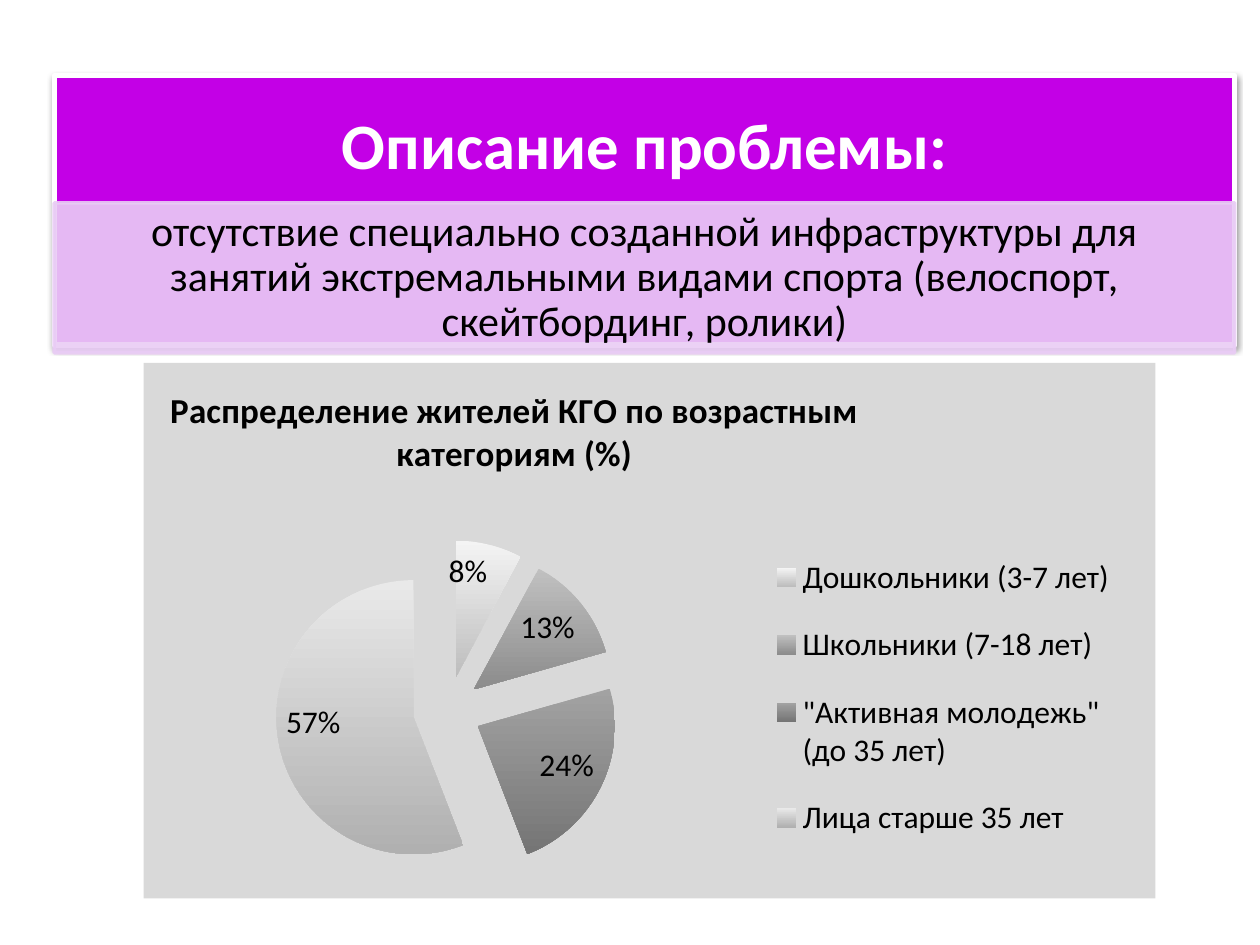
import pptx
import pptx.chart.data
import pptx.dml.color
import pptx.enum.chart
import pptx.enum.shapes
import pptx.enum.text
import pptx.oxml
import pptx.oxml.ns
import pptx.util

Pt = pptx.util.Pt
NS = pptx.oxml.ns.nsdecls("a", "c")
COLORS = {"purple": "C300E6", "lilac": "E9CCF5", "white": "FFFFFF",
          "black": "000000", "panel": "D9D9D9"}


def rgb(name):
    return pptx.dml.color.RGBColor.from_string(COLORS[name])


def write(tf, text, size, color, bold, inset_x, inset_y):
    """Fill a frame with one centred paragraph."""
    tf.word_wrap = True
    tf.vertical_anchor = pptx.enum.text.MSO_ANCHOR.MIDDLE
    tf.margin_left = tf.margin_right = Pt(inset_x)
    tf.margin_top = tf.margin_bottom = Pt(inset_y)
    p = tf.paragraphs[0]
    p.alignment = pptx.enum.text.PP_ALIGN.CENTER
    p.line_spacing = 0.9
    r = p.add_run()
    r.text = text
    r.font.name = "Calibri"
    r.font.size = Pt(size)
    r.font.bold = bold
    r.font.color.rgb = rgb(color)


prs = pptx.Presentation()
prs.slide_width, prs.slide_height = Pt(720), Pt(540)
s = prs.slides.add_slide(prs.slide_layouts[6])

# Heading block with the problem statement over its lower half
left, width = Pt(31), Pt(674.6)
boxes = []
for top, height, fill, line, weight in [(43.2, 154, "purple", "white", 3),
                                        (115.9, 85.7, "lilac", "lilac", 2)]:
    sp = s.shapes.add_shape(pptx.enum.shapes.MSO_SHAPE.RECTANGLE,
                            left, Pt(top), width, Pt(height))
    sp.shadow.inherit = False
    sp.fill.solid()
    sp.fill.fore_color.rgb = rgb(fill)
    sp.line.color.rgb = rgb(line)
    sp.line.width = Pt(weight)
    boxes.append(sp)
block, statement = boxes

effects = block._element.spPr.find(pptx.oxml.ns.qn("a:effectLst"))
effects.append(pptx.oxml.parse_xml(
    f'<a:outerShdw {NS} blurRad="{Pt(3.1)}" dist="{Pt(1.6)}" dir="5400000" rotWithShape="0">'
    '<a:srgbClr val="000000"><a:alpha val="38000"/></a:srgbClr></a:outerShdw>'))
for clr in statement._element.spPr.iter(pptx.oxml.ns.qn("a:srgbClr")):
    clr.append(pptx.oxml.parse_xml(f'<a:alpha {NS} val="90000"/>'))

heading = s.shapes.add_textbox(left, Pt(43.2), width, Pt(83.5))
write(heading.text_frame, "Описание проблемы:", 37, "white", True, 20.9, 20.9)
write(statement.text_frame,
      "отсутствие специально созданной инфраструктуры для занятий экстремальными "
      "видами спорта (велоспорт, скейтбординг, ролики)", 24, "black", False, 13.7, 2.2)

# Age groups: share and vertical gradient of each slice
groups = [("Дошкольники (3-7 лет)", 8, "F4F4F4", "BDBDBD"),
          ("Школьники (7-18 лет)", 13, "C0C0C0", "8C8C8C"),
          ('"Активная молодежь" (до 35 лет)', 24, "A2A2A2", "757575"),
          ("Лица старше 35 лет", 57, "E9E9E9", "B0B0B0")]
data = pptx.chart.data.CategoryChartData(number_format='0"%"')
data.categories = [g[0] for g in groups]
data.add_series("Series 1", [g[1] for g in groups])
chart = s.shapes.add_chart(pptx.enum.chart.XL_CHART_TYPE.PIE, Pt(82.1), Pt(207.4),
                           Pt(578.2), Pt(306), data).chart
chart.font.name = "Calibri"
chart.font.size = Pt(18)
chart.font.color.rgb = rgb("black")

chart.has_title = True
r = chart.chart_title.text_frame.paragraphs[0].add_run()
r.text = "Распределение жителей КГО по возрастным категориям (%)"
r.font.name = "Calibri"
r.font.size = Pt(20)
r.font.bold = True
r.font.color.rgb = rgb("black")

chart.has_legend = True
chart.legend.position = pptx.enum.chart.XL_LEGEND_POSITION.RIGHT
chart.legend.include_in_layout = False

plot = chart.plots[0]
plot.vary_by_categories = True
plot.has_data_labels = True
labels = plot.data_labels
labels.show_value = True
labels.number_format = '0"%"'
labels.number_format_is_linked = False
labels.position = pptx.enum.chart.XL_LABEL_POSITION.INSIDE_END
labels.font.name = "Calibri"
labels.font.size = Pt(18)
labels.font.color.rgb = rgb("black")

ser = plot.series[0]
for i, (_, _, *shades) in enumerate(groups):
    fmt = ser.points[i].format
    fmt.fill.gradient()
    fmt.fill.gradient_angle = 270
    for stop, shade in zip(fmt.fill.gradient_stops, shades):
        stop.color.rgb = pptx.dml.color.RGBColor.from_string(shade)
    fmt.line.fill.background()
ser.format.line.fill.background()
ser._element.find(pptx.oxml.ns.qn("c:spPr")).addnext(
    pptx.oxml.parse_xml(f'<c:explosion {NS} val="25"/>'))

# Panel colour and places of title, pie and legend, as shares of the chart
space = chart._chartSpace
space.chart.addnext(pptx.oxml.parse_xml(
    f'<c:spPr {NS}><a:solidFill><a:srgbClr val="{COLORS["panel"]}"/></a:solidFill>'
    '<a:ln><a:noFill/></a:ln></c:spPr>'))
places = {"title": ("c:tx", {"x": 0.02, "y": 0.03}),
          "plotArea": (None, {"x": 0.13, "y": 0.33, "w": 0.34, "h": 0.64}),
          "legend": ("c:legendPos", {"x": 0.61, "y": 0.31, "w": 0.36, "h": 0.63})}
for tag, (before, place) in places.items():
    part = space.chart.find(pptx.oxml.ns.qn(f"c:{tag}"))
    for old in part.findall(pptx.oxml.ns.qn("c:layout")):
        part.remove(old)
    target = '<c:layoutTarget val="inner"/>' if tag == "plotArea" else ""
    modes = "".join(f'<c:{k}Mode val="edge"/>' for k in "xy")
    sizes = "".join(f'<c:{k} val="{v}"/>' for k, v in place.items())
    layout = pptx.oxml.parse_xml(
        f"<c:layout {NS}><c:manualLayout>{target}{modes}{sizes}</c:manualLayout></c:layout>")
    if before:
        part.find(pptx.oxml.ns.qn(before)).addnext(layout)
    else:
        part.insert(0, layout)

prs.save("out.pptx")
